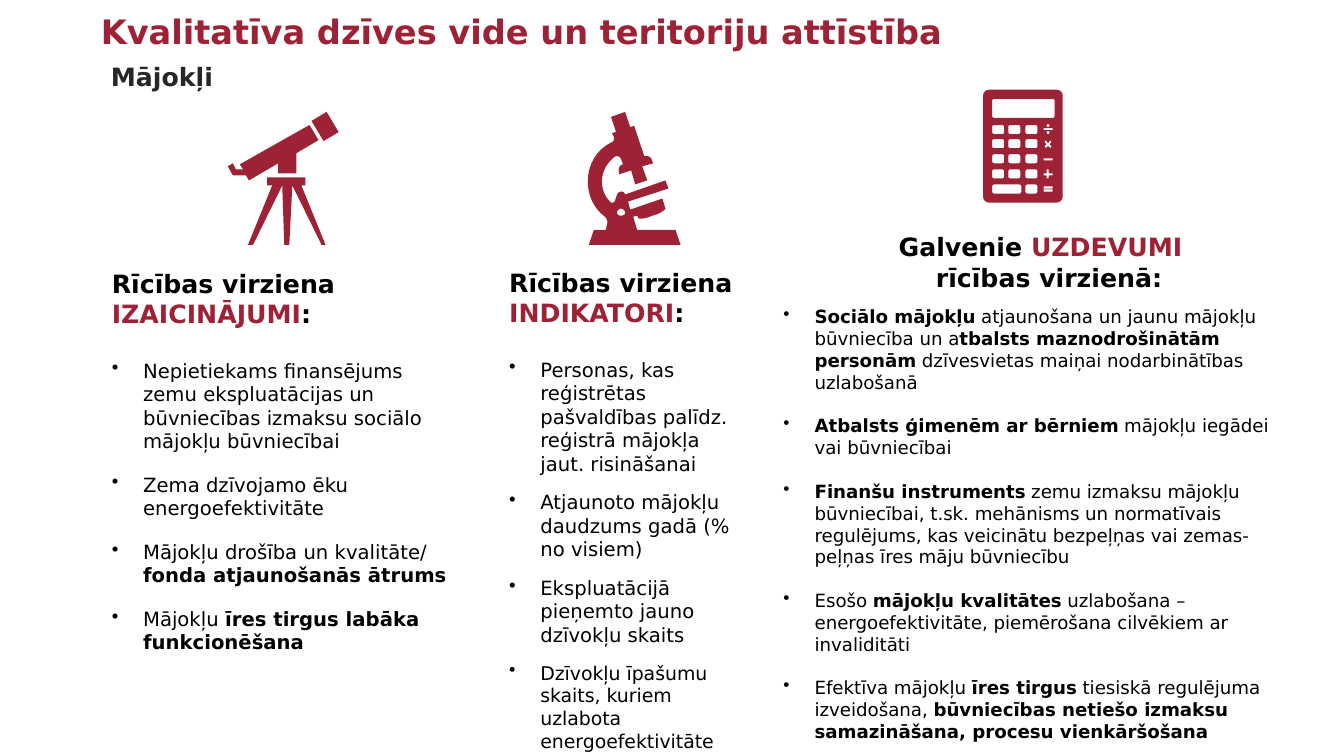
from itertools import product
from math import cos, pi, sin

from pptx import Presentation
from pptx.dml.color import RGBColor
from pptx.enum.text import MSO_ANCHOR as Anchor, MSO_AUTO_SIZE as AutoSize, PP_ALIGN as Align
from pptx.oxml.ns import qn
from pptx.util import Pt
from lxml.etree import SubElement

PX = 9144
FONT = "DejaVu Sans"
RED = RGBColor(0x9D, 0x22, 0x35)
BLACK = RGBColor(0, 0, 0)
GREY = RGBColor(0x26, 0x26, 0x26)

CHALLENGES = [
    "Nepietiekams finansējums zemu ekspluatācijas un būvniecības izmaksu sociālo mājokļu būvniecībai",
    "Zema dzīvojamo ēku energoefektivitāte",
    "Mājokļu drošība un kvalitāte/ *fonda atjaunošanās ātrums*",
    "Mājokļu *īres tirgus labāka funkcionēšana*",
]
INDICATORS = [
    "Personas, kas reģistrētas pašvaldības palīdz. reģistrā mājokļa jaut. risināšanai",
    "Atjaunoto mājokļu daudzums gadā (% no visiem)",
    "Ekspluatācijā pieņemto jauno dzīvokļu skaits",
    "Dzīvokļu īpašumu skaits, kuriem uzlabota energoefektivitāte",
]
TASKS = [
    "*Sociālo mājokļu* atjaunošana un jaunu mājokļu būvniecība un a*tbalsts maznodrošinātām personām* "
    "dzīvesvietas maiņai nodarbinātības uzlabošanā",
    "*Atbalsts ģimenēm ar bērniem* mājokļu iegādei vai būvniecībai",
    "*Finanšu instruments* zemu izmaksu mājokļu būvniecībai, t.sk. mehānisms un normatīvais regulējums, "
    "kas veicinātu bezpeļņas vai zemas-peļņas īres māju būvniecību",
    "Esošo *mājokļu kvalitātes* uzlabošana – energoefektivitāte, piemērošana cilvēkiem ar invaliditāti",
    "Efektīva mājokļu *īres tirgus* tiesiskā regulējuma izveidošana, "
    "*būvniecības netiešo izmaksu samazināšana, procesu vienkāršošana*",
]

TELESCOPE = [
    [(324, 111), (309, 120), (321, 140), (336, 131)],
    [(307, 124), (238, 163), (241, 168), (234, 168), (231, 162), (226, 165), (231, 174), (244, 174),
     (247, 179), (276, 162), (276, 172), (294, 172), (294, 152), (316, 139)],
    [(265, 176), (265, 184), (270, 184), (246, 243), (251, 243), (280, 184), (282, 243), (287, 243),
     (290, 184), (319, 243), (323, 243), (299, 184), (303, 184), (303, 176)],
]
MICROSCOPE = [
    [(620, 111), (606, 116), (611, 131), (607, 132), (609, 136),
     (609, 138, 609, 140, 607, 141), (592, 148, 583, 163, 583, 180),
     (583, 194, 589, 207, 600, 215), (602, 217, 603, 220, 602, 223),
     (601, 228), (589, 228), (584, 243), (675, 243), (670, 228), (632, 228), (628, 215),
     (632, 214), (633, 216), (633, 218, 640, 217, 647, 214), (655, 212, 660, 208, 660, 207),
     (657, 197), (625, 208), (623, 200), (663, 187), (660, 179), (620, 193),
     (619, 189, 614, 189, 612, 193), (610, 199), (610, 201, 606, 202, 605, 200),
     (600, 195, 597, 188, 597, 180), (597, 170, 602, 162, 609, 156),
     (612, 154, 615, 155, 616, 158), (618, 163), (614, 164, 613, 168, 614, 171),
     (614, 173), (626, 169), (630, 183), (642, 179), (637, 165), (648, 162), (647, 160),
     (646, 156, 643, 154, 639, 155), (629, 125), (625, 126)],
    [(616, 207), (618, 207, 620, 209, 620, 211), (620, 213, 618, 214, 616, 214),
     (614, 214, 612, 213, 612, 211), (612, 209, 614, 207, 616, 207)],
]


def rounded(left, top, width, height, radius):
    """Return the points of a rectangle with rounded corners."""
    corners = [(left + width - radius, top + height - radius), (left + radius, top + height - radius),
               (left + radius, top + radius), (left + width - radius, top + radius)]
    return [(x + radius * cos((quarter + step / 4) * pi / 2), y + radius * sin((quarter + step / 4) * pi / 2))
            for quarter, (x, y) in enumerate(corners) for step in range(5)]


def bar(top):
    """Return the outline of one horizontal stroke of an operator."""
    return [(1035, top), (1044, top), (1044, top + 2), (1035, top + 2)]


def calculator():
    """Return the body, screen, keys and operators of the calculator."""
    keys = [rounded(984 + 33 * column // 2, 124 + 59 * row // 4, 12, 9, 2)
            for row, column in product(range(5), range(3)) if row < 4 or column == 2]
    times = [(1037, 139), (1039.5, 142), (1042, 139), (1043, 141), (1041, 143), (1043, 145),
             (1042, 147), (1039.5, 145), (1037, 147), (1036, 145), (1038, 143), (1036, 141)]
    plus = [(1038, 168), (1040, 168), (1040, 172), (1044, 172), (1044, 174), (1040, 174),
            (1040, 177), (1038, 177), (1038, 174), (1035, 174), (1035, 172), (1038, 172)]
    dots = [rounded(1038, top, 3, 3, 1.5) for top in (123, 130)]
    bars = [bar(top) for top in (127, 157, 185, 188)]
    return [rounded(975, 89, 79, 112, 6), rounded(984, 98, 62, 19, 2), rounded(984, 183, 29, 9, 2),
            *keys, *dots, *bars, times, plus]


def flatten(outline):
    """Turn line and curve steps into EMU points."""
    points = []
    for step in outline:
        if len(step) == 2:
            points.append(step)
            continue
        (x0, y0), (x1, y1, x2, y2, x3, y3) = points[-1], step
        for t in (n / 8 for n in range(1, 9)):
            a, b, c, d = (1 - t) ** 3, 3 * t * (1 - t) ** 2, 3 * t * t * (1 - t), t ** 3
            points.append((a * x0 + b * x1 + c * x2 + d * x3, a * y0 + b * y1 + c * y2 + d * y3))
    return [(x * PX, y * PX) for x, y in points]


def write(paragraph, text, size, color=BLACK, accent=BLACK, bold=False, before=0, align=Align.LEFT):
    """Fill a paragraph, giving the parts between asterisks the accent colour and bold type."""
    paragraph.alignment = align
    paragraph.space_before, paragraph.space_after = Pt(before), Pt(0)
    for index, part in enumerate(text.split("*")):
        if part:
            run = paragraph.add_run()
            run.text = part
            run.font.name, run.font.size = FONT, Pt(size)
            run.font.bold = bold or index % 2 == 1
            run.font.color.rgb = accent if index % 2 else color


class Board:
    """Holds the presentation style and the current slide."""

    def __init__(self, width, height):
        """Open a slide of the given size."""
        self.deck = Presentation()
        self.deck.slide_width, self.deck.slide_height = width * PX, height * PX
        self.slide = self.deck.slides.add_slide(self.deck.slide_layouts[5])

    def frame(self, shape, wrap, fit):
        """Set the margins and fitting of a text frame."""
        frame = shape.text_frame
        frame.margin_left = frame.margin_right = frame.margin_top = frame.margin_bottom = 5 * PX
        frame.word_wrap, frame.auto_size = wrap, fit
        frame.vertical_anchor = Anchor.TOP
        return frame

    def title(self, box, text):
        """Place the slide title."""
        heading = self.slide.shapes.title
        heading.left, heading.top, heading.width, heading.height = (n * PX for n in box)
        frame = self.frame(heading, False, AutoSize.NONE)
        write(frame.paragraphs[0], text, 24, color=RED, bold=True)

    def text(self, box, wrap=True):
        """Add an empty text box and return its frame."""
        return self.frame(self.slide.shapes.add_textbox(*(n * PX for n in box)), wrap, AutoSize.SHAPE_TO_FIT_TEXT)

    def bullets(self, frame, items, sizes, first_gap, gap):
        """Append a bulleted list to a frame."""
        for index, (item, size) in enumerate(zip(items, sizes)):
            paragraph = frame.add_paragraph()
            properties = paragraph._p.get_or_add_pPr()
            properties.set("marL", str(31 * PX))
            properties.set("indent", str(-31 * PX))
            SubElement(properties, qn("a:buChar")).set("char", "•")
            write(paragraph, item, size, before=gap if index else first_gap)

    def icon(self, outlines):
        """Draw one icon from closed outlines."""
        start, *others = [flatten(outline) for outline in outlines]
        builder = self.slide.shapes.build_freeform(*start[0], scale=1.0)
        builder.add_line_segments(start[1:], close=True)
        for points in others:
            builder.move_to(*points[0])
            builder.add_line_segments(points[1:], close=True)
        icon = builder.convert_to_shape()
        icon.shadow.inherit = False
        icon.fill.solid()
        icon.fill.fore_color.rgb = RED
        icon.line.fill.background()


def main():
    """Build and save the housing slide."""
    board = Board(1333, 750)
    board.title((95, 6, 845, 50), "Kvalitatīva dzīves vide un teritoriju attīstība")
    topic = board.text((105, 56, 112, 40), wrap=False)
    write(topic.paragraphs[0], "Mājokļi", 18, color=GREY, bold=True)

    columns = [
        ((106, 261, 350, 468), "IZAICINĀJUMI", CHALLENGES, [14] * 4, 14.3, TELESCOPE),
        ((500, 260, 240, 505), "INDIKATORI", INDICATORS, [14, 14, 14, 13.5], 10.7, MICROSCOPE),
    ]
    for box, subject, items, sizes, gap, icon in columns:
        column = board.text(box)
        write(column.paragraphs[0], f"Rīcības virziena *{subject}*:", 18, accent=RED, bold=True)
        board.bullets(column, items, sizes, 21.4, gap)
        board.icon(icon)

    tasks = board.text((772, 225, 520, 539))
    write(tasks.paragraphs[0], "Galvenie *UZDEVUMI*", 18, accent=RED, bold=True, align=Align.CENTER)
    second_line = tasks.add_paragraph()
    second_line._p.get_or_add_pPr().set("marL", str(17 * PX))
    write(second_line, "rīcības virzienā:", 18, bold=True, align=Align.CENTER)
    board.bullets(tasks, TASKS, [13] * 5, 9.5, 15.5)
    board.icon(calculator())

    board.deck.save("out.pptx")


if __name__ == "__main__":
    main()
